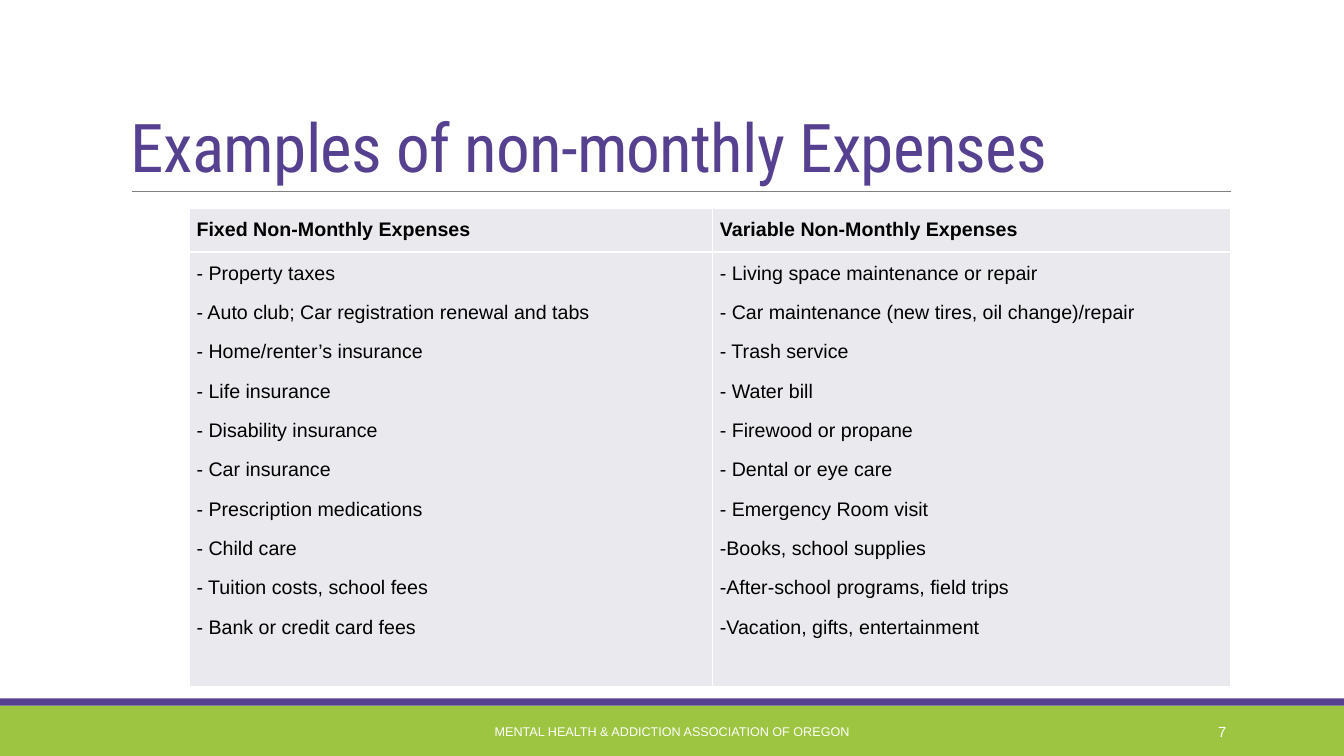
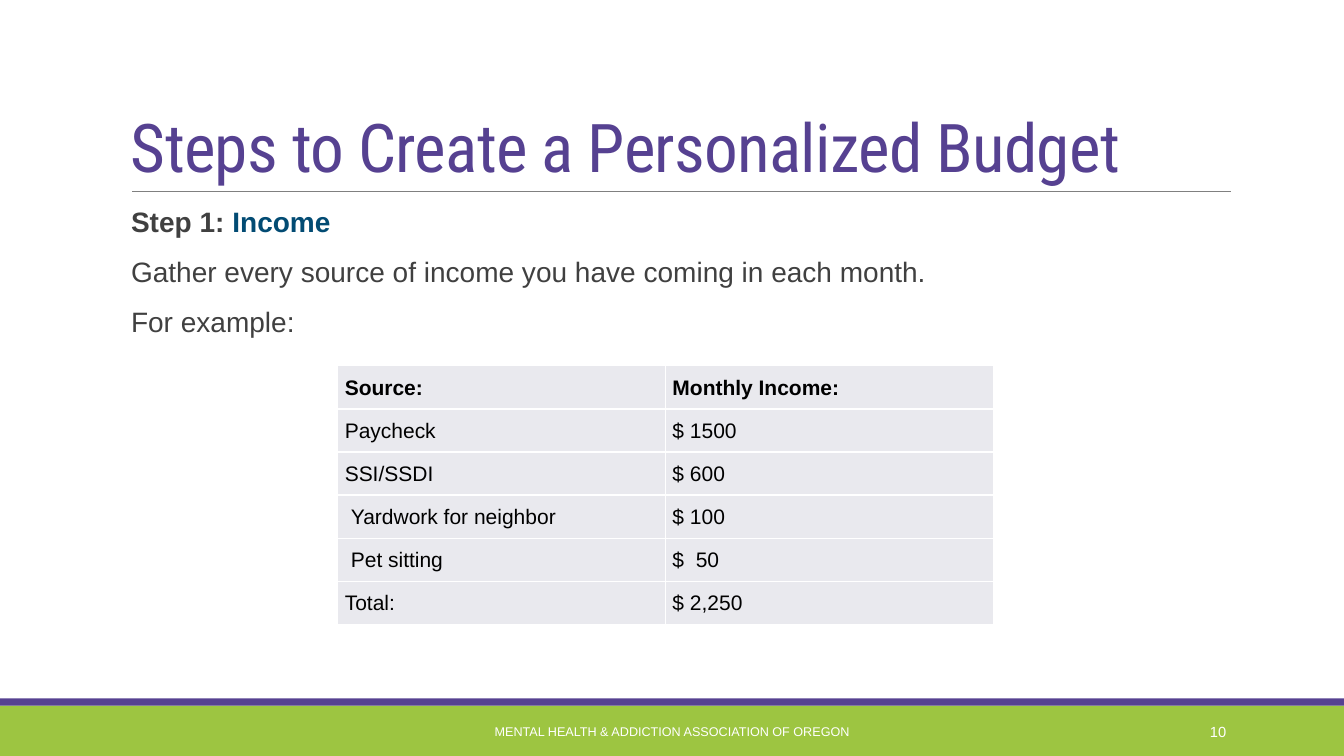
from lxml.etree import SubElement
from pptx import Presentation
from pptx.dml.color import RGBColor
from pptx.enum.shapes import MSO_CONNECTOR, MSO_SHAPE
from pptx.enum.text import MSO_ANCHOR as Anchor, PP_ALIGN as Align
from pptx.oxml.ns import qn
from pptx.util import Inches, Pt

GREEN, PURPLE, GRAY, WHITE = "9DC541", "564191", "808080", "FFFFFF"
BLACK, BODY_GRAY, NAVY, CELL_FILL = "000000", "404040", "024B73", "E9E9EE"
WIDTH, HEIGHT = 13.33, 7.5
BODY_FONT, TITLE_FONT = "Arial", "Roboto Condensed"
ORGANIZATION = "MENTAL HEALTH & ADDICTION ASSOCIATION OF OREGON"

FIXED_EXPENSES = [
    "- Property taxes",
    "- Auto club; Car registration renewal and tabs",
    "- Home/renter’s insurance",
    "- Life insurance",
    "- Disability insurance",
    "- Car insurance",
    "- Prescription medications",
    "- Child care",
    "- Tuition costs, school fees",
    "- Bank or credit card fees",
]
VARIABLE_EXPENSES = [
    "- Living space maintenance or repair",
    "- Car maintenance (new tires, oil change)/repair",
    "- Trash service",
    "- Water bill",
    "- Firewood or propane",
    "- Dental or eye care",
    "- Emergency Room visit",
    "-Books, school supplies",
    "-After-school programs, field trips",
    "-Vacation, gifts, entertainment",
]
INCOME = [
    ("Source:", "Monthly Income:"),
    ("Paycheck", "$ 1500"),
    ("SSI/SSDI", "$ 600"),
    ("Yardwork for neighbor", "$ 100"),
    ("Pet sitting", "$  50"),
    ("Total:", "$ 2,250"),
]
SIDE_JOB_ROWS = (3, 4)


def rgb(value):
    return RGBColor.from_string(value)


def write_text(frame, paragraphs, size, color, font=BODY_FONT, bold=False, align=Align.LEFT,
               line=1.0, before=0, after=0, tracking=0):
    """Fill a frame; a paragraph is a string or a list of (text, color, bold) runs."""
    frame.word_wrap = True
    for index, content in enumerate(paragraphs):
        paragraph = frame.add_paragraph() if index else frame.paragraphs[0]
        paragraph.alignment = align
        paragraph.line_spacing = line
        paragraph.space_before = Pt(before if index else 0)
        paragraph.space_after = Pt(after)
        runs = [(content, color, bold)] if isinstance(content, str) else content
        for text, run_color, run_bold in runs:
            run = paragraph.add_run()
            run.text = text
            run.font.name = font
            run.font.size = Pt(size)
            run.font.bold = run_bold
            run.font.color.rgb = rgb(run_color)
            if tracking:
                run.font._element.set("spc", str(round(tracking * 100)))


def add_text(slide, box, paragraphs, anchor=Anchor.TOP, side_inset=0.1, **text_format):
    frame = slide.shapes.add_textbox(*map(Inches, box)).text_frame
    frame.vertical_anchor = anchor
    frame.margin_left = frame.margin_right = Inches(side_inset)
    write_text(frame, paragraphs, **text_format)


def add_band(slide, top, height, color):
    band = slide.shapes.add_shape(
        MSO_SHAPE.RECTANGLE, 0, Inches(top), Inches(WIDTH), Inches(height))
    band.shadow.inherit = False
    band.fill.solid()
    band.fill.fore_color.rgb = rgb(color)
    band.line.fill.background()


def add_rule(slide, left, right, y):
    rule = slide.shapes.add_connector(
        MSO_CONNECTOR.STRAIGHT, Inches(left), Inches(y), Inches(right), Inches(y))
    rule.line.color.rgb = rgb(GRAY)
    rule.line.width = Pt(0.5)
    SubElement(rule._element.spPr, qn("a:effectLst"))


def add_borders(cell):
    properties = cell._tc.get_or_add_tcPr()
    for side in ("lnL", "lnR", "lnT", "lnB"):
        border = SubElement(properties, qn(f"a:{side}"), w=str(Pt(1)))
        fill = SubElement(border, qn("a:solidFill"))
        SubElement(fill, qn("a:srgbClr"), val=WHITE)


def add_table(slide, left, top, columns, heights, rows, size):
    """Draw rows of cells, each a string or a list of paragraphs, under a bold first row."""
    table = slide.shapes.add_table(
        len(rows), len(columns), Inches(left), Inches(top),
        Inches(sum(columns)), Inches(sum(heights))).table
    table.first_row = table.horz_banding = False
    for column, width in zip(table.columns, columns):
        column.width = Inches(width)
    for row, height in zip(table.rows, heights):
        row.height = Inches(height)
    for r, row in enumerate(rows):
        for c, content in enumerate(row):
            cell = table.cell(r, c)
            cell.margin_left = cell.margin_right = Inches(0.07)
            cell.margin_top = cell.margin_bottom = Inches(0.07)
            add_borders(cell)
            cell.fill.solid()
            cell.fill.fore_color.rgb = rgb(CELL_FILL)
            paragraphs = [content] if isinstance(content, str) else content
            write_text(cell.text_frame, paragraphs, size=size, color=BLACK,
                       bold=r == 0, line=1.15, after=10)
    return table


def add_slide(deck, title, number):
    """Start a slide with its title, rule, bands and footer."""
    slide = deck.slides.add_slide(deck.slide_layouts[6])
    add_band(slide, 7, 0.5, GREEN)
    add_band(slide, 6.93, 0.07, PURPLE)
    add_rule(slide, 1.31, 12.21, 1.9)
    add_text(slide, (1.2, 0.31, 11, 1.59), [title], anchor=Anchor.BOTTOM, size=48,
             color=PURPLE, font=TITLE_FONT, line=0.85, tracking=-0.5)
    add_text(slide, (4.03, 7.06, 5.27, 0.4), [ORGANIZATION], anchor=Anchor.MIDDLE,
             size=9, color=WHITE, align=Align.CENTER)
    add_text(slide, (10.83, 7.06, 1.43, 0.4), [str(number)], anchor=Anchor.MIDDLE,
             size=10.5, color=WHITE, align=Align.RIGHT)
    return slide


def add_expenses_slide(deck):
    slide = add_slide(deck, "Examples of non-monthly Expenses", 7)
    rows = [("Fixed Non-Monthly Expenses", "Variable Non-Monthly Expenses"),
            (FIXED_EXPENSES, VARIABLE_EXPENSES)]
    add_table(slide, 1.88, 2.07, (5.19, 5.14), (0.43, 4.31), rows, size=14)


def add_income_slide(deck):
    slide = add_slide(deck, "Steps to Create a Personalized Budget", 10)
    steps = [
        [("Step 1: ", BODY_GRAY, True), ("Income", NAVY, True)],
        "Gather every source of income you have coming in each month.",
        "For example:",
    ]
    add_text(slide, (1.3, 2.02, 10.9, 1.5), steps, side_inset=0, size=20,
             color=BODY_GRAY, line=0.9, before=12, after=2)
    income = add_table(slide, 3.35, 3.63, (3.25, 3.25), [0.4] * len(INCOME), INCOME, size=15)
    for row in SIDE_JOB_ROWS:
        income.cell(row, 0).margin_left = Inches(0.13)


def main():
    deck = Presentation()
    deck.slide_width, deck.slide_height = Inches(WIDTH), Inches(HEIGHT)
    add_expenses_slide(deck)
    add_income_slide(deck)
    deck.save("out.pptx")


if __name__ == "__main__":
    main()
